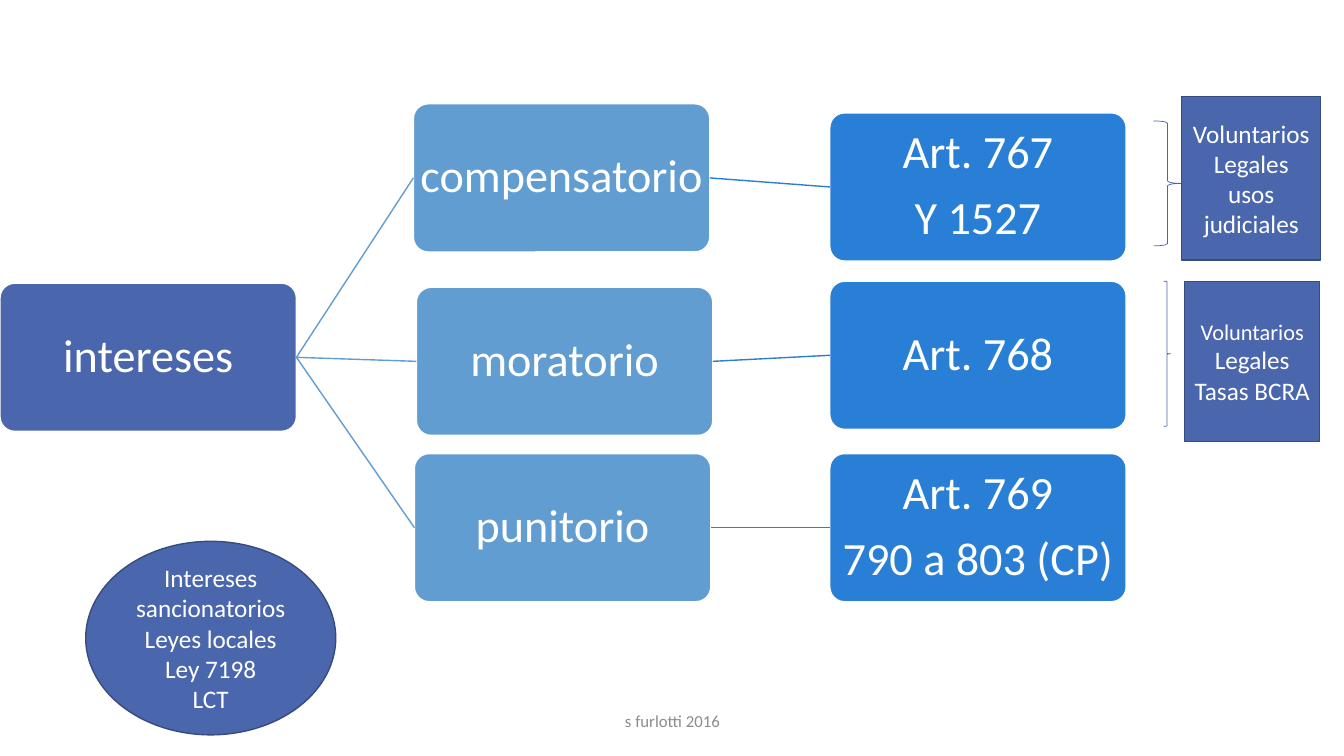
from lxml.etree import SubElement
from pptx import Presentation
from pptx.dml.color import RGBColor
from pptx.enum.shapes import MSO_CONNECTOR, MSO_SHAPE as Preset
from pptx.enum.text import MSO_ANCHOR, PP_ALIGN
from pptx.oxml.ns import qn
from pptx.util import Inches, Pt

COLORS = {
    "root": "4A66AC",
    "kind": "629DD1",
    "article": "297FD5",
    "outline": "374B7F",
    "white": "FFFFFF",
    "footer": "8C8C8C",
}
NODE_WIDTH, NODE_HEIGHT = 2.94, 1.47
ROOT_TOP = 2.81
ARTICLE_LEFT = 8.23
# Each branch: kind of interest, its left and top, article lines, their top
BRANCHES = [
    ("compensatorio", 4.1, 1.03, ["Art. 767", "Y 1527"], 1.12),
    ("moratorio", 4.13, 2.85, ["Art. 768"], 2.79),
    ("punitorio", 4.11, 4.5, ["Art. 769", "790 a 803 (CP)"], 4.5),
]
LEFT_SITE, RIGHT_SITE = 1, 3


def color(name):
    return RGBColor.from_string(COLORS[name])


def write(shape, lines, size=18, first_size=None, ink="white", inset=0.1,
          spacing=None, after=0):
    """Fill a shape with centred lines; first_size applies to the first only."""
    frame = shape.text_frame
    frame.word_wrap = True
    frame.vertical_anchor = MSO_ANCHOR.MIDDLE
    frame.margin_left = frame.margin_right = Inches(inset)
    frame.margin_top = frame.margin_bottom = Inches(inset / 2)
    for index, line in enumerate(lines):
        paragraph = frame.add_paragraph() if index else frame.paragraphs[0]
        paragraph.alignment = PP_ALIGN.CENTER
        paragraph.line_spacing = spacing
        paragraph.space_after = Pt(after)
        run = paragraph.add_run()
        run.text = line
        run.font.name = "Calibri"
        run.font.size = Pt(first_size if first_size and not index else size)
        run.font.color.rgb = color(ink)


def add_preset(slide, preset, box, line, fill=None, line_width=1):
    shape = slide.shapes.add_shape(preset, *map(Inches, box))
    shape.shadow.inherit = False
    if fill:
        shape.fill.solid()
        shape.fill.fore_color.rgb = color(fill)
    else:
        shape.fill.background()
    shape.line.color.rgb = color(line)
    shape.line.width = Pt(line_width)
    return shape


def add_node(slide, left, top, lines, fill):
    box = (left, top, NODE_WIDTH, NODE_HEIGHT)
    node = add_preset(slide, Preset.ROUNDED_RECTANGLE, box, "white", fill)
    node.adjustments[0] = 0.1
    write(node, lines, size=33, inset=0, spacing=0.9, after=11.5)
    return node


def add_link(slide, parent, child, line):
    link = slide.shapes.add_connector(MSO_CONNECTOR.STRAIGHT, 0, 0, 0, 0)
    link.begin_connect(parent, RIGHT_SITE)
    link.end_connect(child, LEFT_SITE)
    link.line.color.rgb = color(line)
    link.line.width = Pt(1)
    SubElement(link._element.spPr, qn("a:effectLst"))


def add_note(slide, preset, box, lines, first_size=None):
    note = add_preset(slide, preset, box, "outline", "root")
    write(note, lines, first_size=first_size)


def add_brace(slide, box):
    add_preset(slide, Preset.RIGHT_BRACE, box, "root", line_width=0.5)


def add_footer(slide, text):
    box = (4.42, 6.95, 4.5, 0.4)
    footer = slide.shapes.add_textbox(*map(Inches, box))
    write(footer, [text], size=12, ink="footer")


def main():
    presentation = Presentation()
    presentation.slide_width = Inches(13.33)
    presentation.slide_height = Inches(7.5)
    slide = presentation.slides.add_slide(presentation.slide_layouts[6])

    root = add_node(slide, 0, ROOT_TOP, ["intereses"], "root")
    for name, left, top, article_lines, article_top in BRANCHES:
        kind = add_node(slide, left, top, [name], "kind")
        article = add_node(slide, ARTICLE_LEFT, article_top, article_lines, "article")
        add_link(slide, root, kind, "kind")
        add_link(slide, kind, article, "article")

    add_brace(slide, (11.44, 1.2, 0.28, 1.24))
    add_note(slide, Preset.RECTANGLE, (11.72, 0.96, 1.38, 1.62),
             ["Voluntarios", "Legales", "usos", "judiciales"])
    add_brace(slide, (11.54, 2.79, 0.07, 1.44))
    add_note(slide, Preset.RECTANGLE, (11.75, 2.79, 1.34, 1.59),
             ["Voluntarios", "Legales", "Tasas BCRA"], first_size=16)
    add_note(slide, Preset.OVAL, (0.85, 5.37, 2.48, 1.92),
             ["Intereses sancionatorios", "Leyes locales", "Ley 7198", "LCT"])
    add_footer(slide, "s furlotti 2016")
    presentation.save("out.pptx")


if __name__ == "__main__":
    main()
